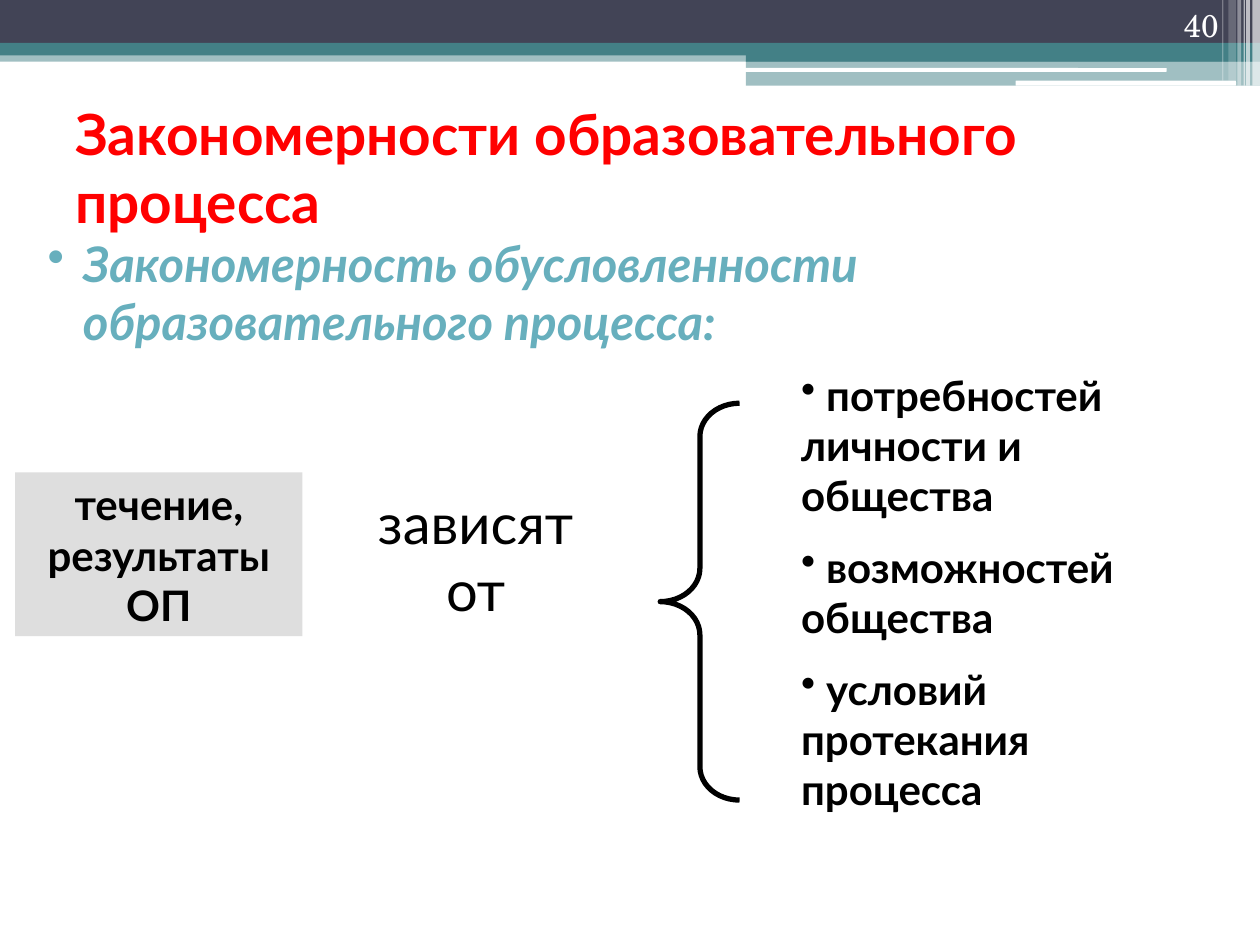
from dataclasses import dataclass

from lxml.etree import SubElement
from pptx import Presentation
from pptx.dml.color import RGBColor
from pptx.enum.shapes import MSO_SHAPE as Preset
from pptx.enum.text import MSO_ANCHOR as Anchor, MSO_AUTO_SIZE as AutoSize, PP_ALIGN as Align
from pptx.oxml.ns import qn
from pptx.util import Inches, Pt

COLUMNS, ROWS = 100, 75
CELL = Inches(0.1)


@dataclass(frozen=True)
class Theme:
    dark: str = "424456"
    teal: str = "438086"
    accent: str = "67AFBD"
    white: str = "FFFFFF"
    black: str = "000000"
    red: str = "FF0000"
    grey: str = "DEDEDE"
    sans: str = "Lato"
    serif: str = "TeX Gyre Schola"
    number: float = 18
    item: float = 24
    lead: float = 28
    verb: float = 32
    title: float = 32.4


THEME = Theme()


@dataclass(frozen=True)
class Area:
    """A place on the grid, in columns and rows."""
    column: float
    row: float
    width: float
    height: float

    def lengths(self) -> list[int]:
        return [round(n * CELL) for n in (self.column, self.row, self.width, self.height)]


@dataclass(frozen=True)
class Band:
    area: Area
    color: str
    opacity: int = 100
    rounded: bool = False


@dataclass(frozen=True)
class Block:
    area: Area
    lines: tuple[str, ...]
    size: float
    color: str = THEME.black
    font: str = THEME.sans
    bold: bool = False
    italic: bool = False
    align: Align = Align.LEFT
    anchor: Anchor = Anchor.TOP
    fill: str | None = None
    bullet: bool = False
    hanging: tuple[float, float] = (0, 0)  # left margin and indent, in cells
    first_gap: float = 0
    grows: bool = False


def stripe(column: float, width: float, height: float, opacity: int) -> Band:
    return Band(Area(column, 0, width, height), THEME.white, opacity)


BANDS = [
    # Full-width header
    Band(Area(0, 4, COLUMNS, 0.9), THEME.teal, 50),
    Band(Area(0, 0, COLUMNS, 3.4), THEME.dark),
    Band(Area(0, 3.4, COLUMNS, 1), THEME.teal),
    # Step on the right with its white rules
    Band(Area(59.2, 3.9, 40.8, 1), THEME.teal),
    Band(Area(59.2, 4.8, 40.8, 2), THEME.teal, 50),
    Band(Area(59.1, 5.4, 33.5, 0.3), THEME.white, rounded=True),
    Band(Area(80.6, 6.4, 17.5, 0.4), THEME.white, rounded=True),
    # Translucent stripes at the right edge
    stripe(99.4, 0.6, 6.8, 65),
    stripe(98.9, 0.3, 6.8, 65),
    stripe(98.7, 0.1, 6.8, 60),
    stripe(98.2, 0.3, 6.8, 40),
    stripe(97.5, 0.6, 6.4, 20),
    stripe(97, 0.1, 6.4, 30),
]

BLOCKS = [
    # Slide number
    Block(Area(89.4, 0, 8.3, 4), ("40",), THEME.number, THEME.white, THEME.serif,
          align=Align.RIGHT, anchor=Anchor.BOTTOM),
    # Lead statement
    Block(Area(1.6, 18, 96.9, 53.9),
          ("Закономерность обусловленности образовательного процесса:",),
          THEME.lead, THEME.accent, bold=True, italic=True, bullet=True,
          hanging=(4, -2.8), first_gap=3),
    # What depends, and on what
    Block(Area(1.2, 37.5, 22.8, 13), ("течение, результаты ОП",), THEME.item,
          bold=True, align=Align.CENTER, fill=THEME.grey, grows=True),
    Block(Area(28.7, 38.3, 18.1, 11.7), ("зависят от",), THEME.verb,
          align=Align.CENTER, grows=True),
    Block(Area(62.6, 28.8, 30.7, 36.9),
          (" потребностей личности и общества",
           " возможностей общества",
           " условий протекания процесса"),
          THEME.item, bold=True, bullet=True, grows=True),
    # Title
    Block(Area(5, 7.8, 90, 10.9), ("Закономерности образовательного процесса",),
          THEME.title, THEME.red, bold=True, anchor=Anchor.MIDDLE),
]

BRACE = Area(52.4, 32, 6.3, 31.5)


def draw_band(page, band: Band) -> None:
    preset = Preset.ROUNDED_RECTANGLE if band.rounded else Preset.RECTANGLE
    shape = page.shapes.add_shape(preset, *band.area.lengths())
    shape.shadow.inherit = False
    shape.line.fill.background()
    shape.fill.solid()
    shape.fill.fore_color.rgb = RGBColor.from_string(band.color)
    if band.opacity < 100:
        color = shape.fill._xPr.find(".//" + qn("a:srgbClr"))
        SubElement(color, qn("a:alpha"), val=str(band.opacity * 1000))


def add_bullet(para, block: Block) -> None:
    margin, indent = (str(round(n * CELL)) for n in block.hanging)
    properties = para._p.get_or_add_pPr()
    properties.set("marL", margin)
    properties.set("indent", indent)
    color = SubElement(properties, qn("a:buClr"))
    SubElement(color, qn("a:srgbClr"), val=block.color)
    SubElement(properties, qn("a:buChar"), char="•")


def draw_block(page, block: Block) -> None:
    box = page.shapes.add_textbox(*block.area.lengths())
    if block.fill:
        box.fill.solid()
        box.fill.fore_color.rgb = RGBColor.from_string(block.fill)
    frame = box.text_frame
    frame.word_wrap = True
    frame.auto_size = AutoSize.SHAPE_TO_FIT_TEXT if block.grows else AutoSize.NONE
    frame.vertical_anchor = block.anchor
    for index, line in enumerate(block.lines):
        para = frame.add_paragraph() if index else frame.paragraphs[0]
        para.text = line
        para.alignment = block.align
        para.space_before = Pt(block.size / 2 if index else block.first_gap)
        font = para.font
        font.name, font.size = block.font, Pt(block.size)
        font.bold, font.italic = block.bold, block.italic
        font.color.rgb = RGBColor.from_string(block.color)
        if block.bullet:
            add_bullet(para, block)


def draw_brace(page, area: Area) -> None:
    brace = page.shapes.add_shape(Preset.LEFT_BRACE, *area.lengths())
    brace.shadow.inherit = False
    brace.fill.background()
    brace.line.color.rgb = RGBColor.from_string(THEME.black)
    brace.line.width = Pt(3)
    brace.adjustments[0] = 0.42


def main() -> None:
    deck = Presentation()
    deck.slide_width, deck.slide_height = COLUMNS * CELL, ROWS * CELL
    page = deck.slides.add_slide(deck.slide_layouts[6])
    for band in BANDS:
        draw_band(page, band)
    for block in BLOCKS:
        draw_block(page, block)
    draw_brace(page, BRACE)
    deck.save("out.pptx")


if __name__ == "__main__":
    main()
